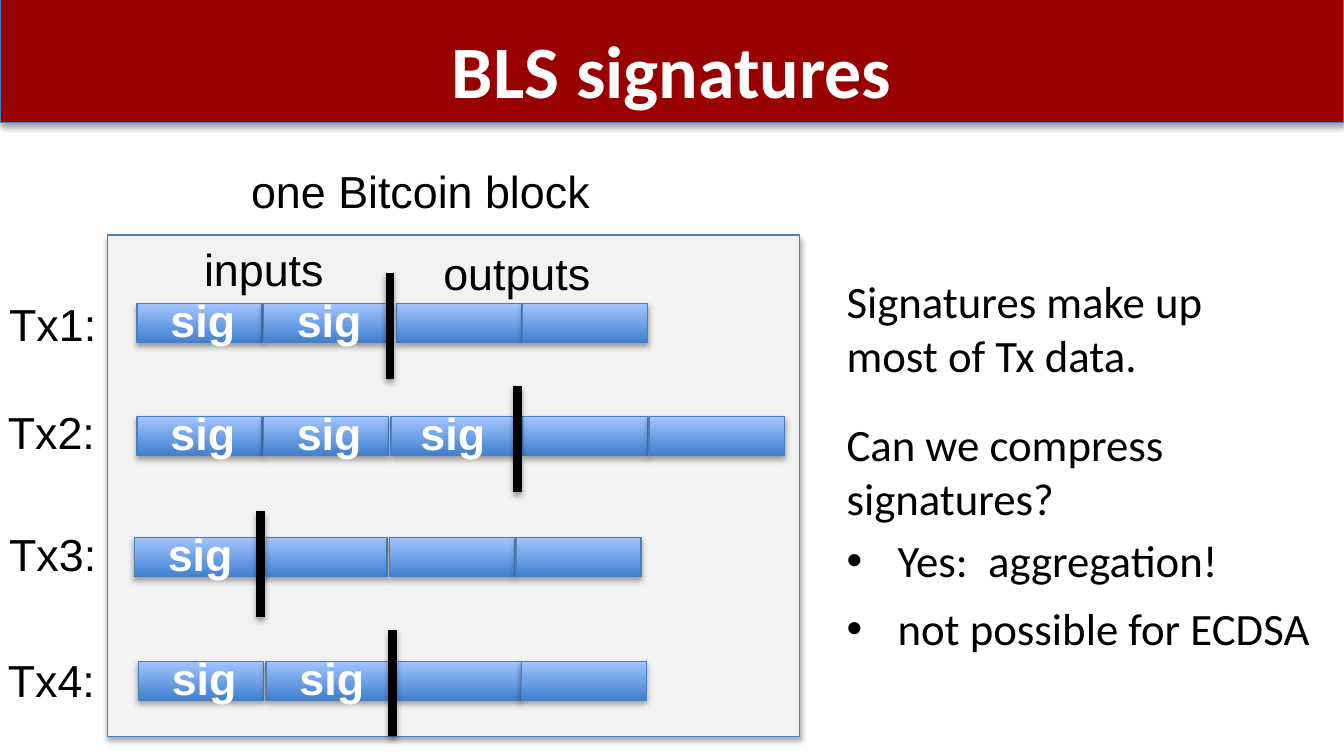
from lxml.etree import SubElement
from pptx import Presentation
from pptx.dml.color import RGBColor
from pptx.enum.shapes import MSO_CONNECTOR, MSO_SHAPE
from pptx.enum.text import MSO_ANCHOR, PP_ALIGN
from pptx.oxml.ns import qn
from pptx.util import Pt

SCALE = 9144
RED = RGBColor(0x99, 0x00, 0x00)
EDGE = RGBColor(0x4B, 0x7E, 0xBC)
GREY = RGBColor(0xF2, 0xF2, 0xF2)
DEEP = RGBColor(0x3F, 0x80, 0xCE)
PALE = RGBColor(0xA4, 0xC4, 0xFF)
BLACK = RGBColor(0, 0, 0)
WHITE = RGBColor(0xFF, 0xFF, 0xFF)

ROWS = [
    ("Tx1:", 51, -83, 41, (22, 116, 215, 309), 93, 2, 210, 28),
    ("Tx2:", 135, -84, 121, (22, 116, 211, 309, 403), 101, 3, 305, 112),
    ("Tx3:", 225, -83, 212, (20, 115, 210, 304), 93, 1, 114, 205),
    ("Tx4:", 317, -84, 306, (23, 118, 215, 308), 93, 2, 212, 294),
]


def px(*sizes):
    return [size * SCALE for size in sizes]


def shade(shape, alpha):
    effects = SubElement(shape._element.spPr, qn("a:effectLst"))
    outer = SubElement(effects, qn("a:outerShdw"), blurRad="39370",
                       dist="22860", dir="5400000", rotWithShape="0")
    color = SubElement(outer, qn("a:srgbClr"), val="000000")
    SubElement(color, qn("a:alpha"), val=str(alpha * 1000))


def add_box(slide, box, fill=None):
    shape = slide.shapes.add_shape(MSO_SHAPE.RECTANGLE, *px(*box))
    if fill is None:
        shape.fill.gradient()
        shape.fill.gradient_angle = 90
        for stop, color in zip(shape.fill.gradient_stops, (DEEP, PALE)):
            stop.color.rgb = color
    else:
        shape.fill.solid()
        shape.fill.fore_color.rgb = fill
    shape.line.color.rgb = EDGE
    shape.line.width = Pt(0.75)
    shade(shape, 35)


def style(line, name, size, color, bold=False):
    for run in line.runs:
        run.font.name = name
        run.font.size = Pt(size)
        run.font.color.rgb = color
        run.font.bold = bold


def add_text(slide, box, text, color=BLACK, bold=False, name="Arial", size=24):
    frame = slide.shapes.add_textbox(*px(*box)).text_frame
    frame.word_wrap = False
    frame.text = text
    style(frame.paragraphs[0], name, size, color, bold)
    return frame


def add_head(slide, box):
    left, top, width, height = box
    add_box(slide, box, RED)
    inner = (left + 50, top + 18, width - 100, height - 24)
    frame = add_text(slide, inner, "BLS signatures", WHITE, True, "Calibri", 39.6)
    frame.vertical_anchor = MSO_ANCHOR.MIDDLE
    frame.paragraphs[0].alignment = PP_ALIGN.CENTER


def add_row(slide, x, y, row):
    label, top, side, base, lefts, last, signed, split, start = row
    add_text(slide, (x + side, y + base, 86, 50), label)
    for i, left in enumerate(lefts):
        width = last if left == lefts[-1] else 93
        add_box(slide, (x + left, y + top, width, 29))
        if i < signed:
            inset = 12 if i == 2 else 15
            spot = (x + left + inset, y + top - 13, 69, 50)
            add_text(slide, spot, "sig", WHITE, True)
    ends = (x + split, y + start, x + split, y + start + 79)
    bar = slide.shapes.add_connector(MSO_CONNECTOR.STRAIGHT, *px(*ends))
    bar.line.color.rgb = BLACK
    bar.line.width = Pt(4.5)
    shade(bar, 38)


def add_block(slide, box):
    left, top, width, height = box
    add_box(slide, box, GREY)
    add_text(slide, (left + 97, top - 58, 275, 50), "one Bitcoin block")
    add_text(slide, (left + 62, top, 110, 50), "inputs")
    add_text(slide, (left + 240, top + 3, 131, 50), "outputs")
    for row in ROWS:
        add_row(slide, left, top, row)


def add_notes(slide, box):
    frame = slide.shapes.add_textbox(*px(*box)).text_frame
    frame.word_wrap = True
    lines = [
        ("Signatures make up \vmost of Tx data.", 4.8, 1, False),
        ("Can we compress \vsignatures?", 18.7, 1, False),
        ("Yes:  aggregation!", 4.8, 1, True),
        ("not possible for ECDSA", 4.8, 1.1, True),
    ]
    for i, (text, before, pitch, dot) in enumerate(lines):
        line = frame.add_paragraph() if i else frame.paragraphs[0]
        line.text = text
        line.space_before = Pt(before)
        line.line_spacing = pitch
        style(line, "Calibri", 24, BLACK)
        if dot:
            props = line._p.get_or_add_pPr()
            props.set("marL", str(38 * SCALE))
            props.set("indent", str(-38 * SCALE))
            SubElement(props, qn("a:buFont"), typeface="Arial")
            SubElement(props, qn("a:buChar"), char="•")


def main():
    deck = Presentation()
    deck.slide_width = 1000 * SCALE
    deck.slide_height = deck.slide_width * 9 // 16
    slide = deck.slides.add_slide(deck.slide_layouts[6])
    add_head(slide, (0, -1, 1000, 92))
    add_block(slide, (80, 175, 515, 373))
    add_notes(slide, (620, 199, 368, 322))
    deck.save("out.pptx")


if __name__ == "__main__":
    main()
